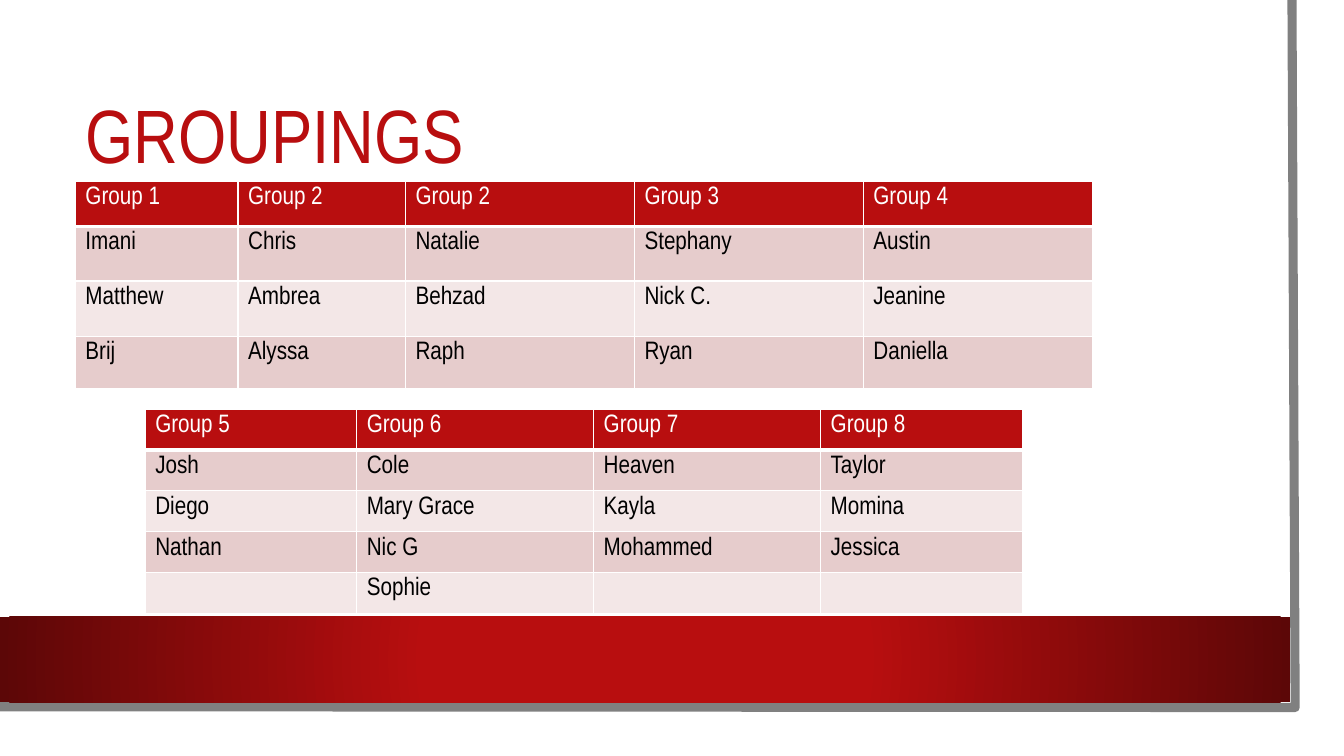
from dataclasses import dataclass

from lxml import etree
from pptx import Presentation
from pptx.dml.color import RGBColor
from pptx.enum.shapes import MSO_SHAPE
from pptx.enum.text import MSO_ANCHOR
from pptx.oxml import parse_xml
from pptx.oxml.ns import nsdecls, qn
from pptx.util import Cm, Pt

RECTANGLE = MSO_SHAPE.RECTANGLE
MIDDLE = MSO_ANCHOR.MIDDLE

WHITE = RGBColor(0xFF, 0xFF, 0xFF)
BLACK = RGBColor(0x00, 0x00, 0x00)
GREY = RGBColor(0x80, 0x80, 0x80)
RED = RGBColor(0xB8, 0x0E, 0x0F)
DARK_RED = RGBColor(0x5C, 0x07, 0x07)
ROSE = RGBColor(0xE6, 0xCC, 0xCC)
PALE_ROSE = RGBColor(0xF3, 0xE7, 0xE7)
FONT = "Arial Narrow"


@dataclass(frozen=True)
class GroupTable:
    """Place and contents of one table, lengths in centimetres."""
    left: float
    top: float
    widths: list[float]
    heights: list[float]
    rows: list[list[str]]


GROUP_TABLES = [
    GroupTable(
        1.9, 4.57, [4.1, 4.22, 5.77, 5.77, 5.77], [1.14, 1.37, 1.4, 1.32],
        [
            ["Group 1", "Group 2", "Group 2", "Group 3", "Group 4"],
            ["Imani", "Chris", "Natalie", "Stephany", "Austin"],
            ["Matthew", "Ambrea", "Behzad", "Nick C.", "Jeanine"],
            ["Brij", "Alyssa", "Raph", "Ryan", "Daniella"],
        ],
    ),
    GroupTable(
        3.66, 10.31, [5.33, 5.97, 5.72, 5.08], [1.03] * 5,
        [
            ["Group 5", "Group 6", "Group 7", "Group 8"],
            ["Josh", "Cole", "Heaven", "Taylor"],
            ["Diego", "Mary Grace", "Kayla", "Momina"],
            ["Nathan", "Nic G", "Mohammed", "Jessica"],
            ["", "Sophie", "", ""],
        ],
    ),
]


def add_span(para, text: str, size: float, color: RGBColor) -> None:
    span = para.add_run()
    span.text = text
    span.font.name = FONT
    span.font.size = Pt(size)
    span.font.bold = False
    span.font.color.rgb = color


def add_panel(page, width: float, height: float, top: float = 0):
    """Add a rectangle without outline at the left edge of the page."""
    panel = page.shapes.add_shape(RECTANGLE, 0, Cm(top), Cm(width), Cm(height))
    panel.shadow.inherit = False
    panel.line.fill.background()
    return panel


def add_sheet(page) -> None:
    sheet = add_panel(page, 33.27, 18.47)
    sheet.fill.solid()
    sheet.fill.fore_color.rgb = WHITE


def add_sheet_edge(page) -> None:
    builder = page.shapes.build_freeform(Cm(32.56), 0)
    corners = [(Cm(32.64), Cm(17.83)), (Cm(-0.08), Cm(17.81))]
    builder.add_line_segments(corners, close=False)
    edge = builder.convert_to_shape()
    edge.shadow.inherit = False
    edge.fill.background()
    edge.line.color.rgb = GREY
    edge.line.width = Pt(6.5)


def add_band(page) -> None:
    """Add the red band, darkening outward from its centre."""
    band = add_panel(page, 32.51, 2.16, top=15.54)
    band.fill.gradient()
    stops = [(0.34, RED), (1, DARK_RED)]
    for stop, (position, color) in zip(band.fill.gradient_stops, stops):
        stop.position = position
        stop.color.rgb = color
    linear = next(band._element.spPr.iter(qn("a:lin")))
    radial = parse_xml(
        f'<a:path {nsdecls("a")} path="circle">'
        '<a:fillToRect l="50000" t="50000" r="50000" b="50000"/></a:path>'
    )
    linear.getparent().replace(linear, radial)


def add_title(page, text: str) -> None:
    box = page.shapes.add_textbox(Cm(1.9), Cm(1.9), Cm(28.88), Cm(3.2))
    box.text_frame.word_wrap = True
    box.text_frame.vertical_anchor = MIDDLE
    para = box.text_frame.paragraphs[0]
    para.line_spacing = 0.9
    add_span(para, text, 54, RED)


def set_borders(cell, top: float, bottom: float) -> None:
    """Draw white borders, one point wide at the sides."""
    properties = cell._tc.get_or_add_tcPr()
    widths = {"lnL": 1, "lnR": 1, "lnT": top, "lnB": bottom}
    for index, (side, width) in enumerate(widths.items()):
        border = etree.Element(qn(f"a:{side}"), w=str(Pt(width)))
        fill = etree.SubElement(border, qn("a:solidFill"))
        etree.SubElement(fill, qn("a:srgbClr"), val=str(WHITE))
        properties.insert(index, border)


def add_group_table(page, group: GroupTable) -> None:
    table = page.shapes.add_table(
        len(group.rows), len(group.widths), Cm(group.left), Cm(group.top),
        Cm(sum(group.widths)), Cm(sum(group.heights)),
    ).table
    table.first_row = False
    table.horz_banding = False
    for column, width in zip(table.columns, group.widths):
        column.width = Cm(width)
    for index, (row, height) in enumerate(zip(table.rows, group.heights)):
        row.height = Cm(height)
        is_header = index == 0
        fill_color = RED if is_header else (PALE_ROSE, ROSE)[index % 2]
        for cell, text in zip(row.cells, group.rows[index]):
            cell.fill.solid()
            cell.fill.fore_color.rgb = fill_color
            set_borders(cell, 3 if index == 1 else 1, 3 if is_header else 1)
            if text:
                para = cell.text_frame.paragraphs[0]
                add_span(para, text, 18, WHITE if is_header else BLACK)


def main() -> None:
    deck = Presentation()
    deck.slide_width = Cm(33.87)
    deck.slide_height = Cm(19.05)
    page = deck.slides.add_slide(deck.slide_layouts[6])
    add_sheet(page)
    add_sheet_edge(page)
    add_band(page)
    add_title(page, "GROUPINGS")
    for group in GROUP_TABLES:
        add_group_table(page, group)
    deck.save("out.pptx")


if __name__ == "__main__":
    main()
